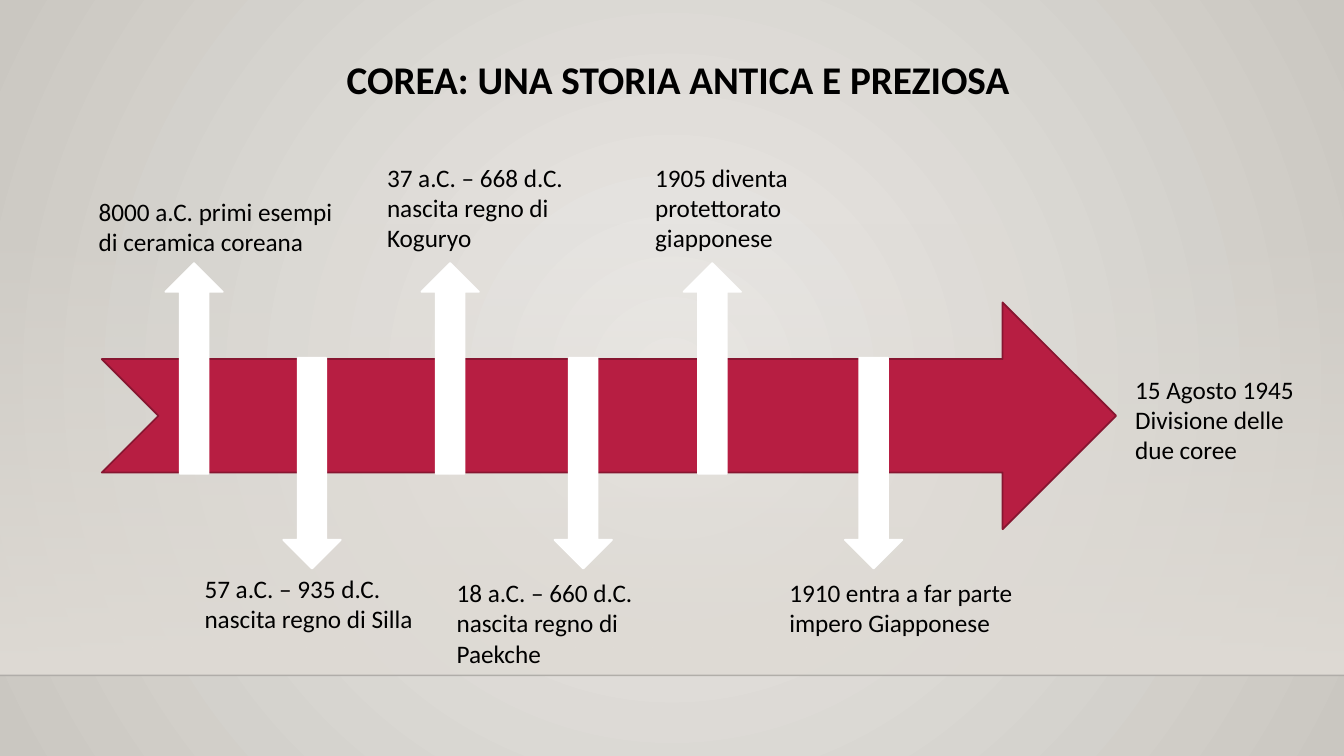
"""Build a timeline slide on the history of Korea."""
from dataclasses import dataclass

from lxml import etree
from pptx import Presentation
from pptx.dml.color import RGBColor
from pptx.dml.fill import FillFormat
from pptx.enum.shapes import MSO_CONNECTOR, MSO_SHAPE
from pptx.enum.text import MSO_AUTO_SIZE, PP_ALIGN
from pptx.oxml.ns import qn
from pptx.shapes.autoshape import Shape
from pptx.slide import Slide
from pptx.util import Pt

PX = 9144
WIDE, HIGH = 1333, 750
FLOOR = 670
FONT = "Calibri"
RECT, BAND = MSO_SHAPE.RECTANGLE, MSO_SHAPE.NOTCHED_RIGHT_ARROW
UP, DOWN = MSO_SHAPE.UP_ARROW, MSO_SHAPE.DOWN_ARROW
LINE = MSO_CONNECTOR.STRAIGHT
LEFT, MID = PP_ALIGN.LEFT, PP_ALIGN.CENTER
FIT = MSO_AUTO_SIZE.SHAPE_TO_FIT_TEXT
COLORS = {
    "glow": "ECEAE7", "edge": "CAC7C1", "wall": "DFDBD5", "rule": "000001",
    "band": "B71E42", "rim": "871631", "mark": "FFFFFF", "text": "000000",
}


@dataclass(frozen=True)
class Box:
    x: int
    y: int
    w: int
    h: int


@dataclass(frozen=True)
class Label:
    box: Box
    lines: tuple[str, ...]
    size: int = 18
    bold: bool = False
    align: PP_ALIGN = LEFT


@dataclass(frozen=True)
class Event:
    x: int
    up: bool
    label: Label


TITLE = Label(Box(126, 50, 1093, 57), ("COREA: UNA STORIA ANTICA E PREZIOSA",),
              28, True, MID)
END = Label(Box(1116, 366, 207, 101),
            ("15 Agosto 1945", "Divisione delle due coree"))
EVENTS = [
    Event(164, True, Label(Box(88, 190, 269, 71),
                           ("8000 a.C. primi esempi di ceramica coreana",))),
    Event(281, False, Label(Box(193, 564, 268, 71),
                            ("57 a.C. – 935 d.C. nascita regno di Silla",))),
    Event(418, True, Label(Box(374, 156, 201, 101),
                           ("37 a.C. – 668 d.C. nascita regno di Koguryo",))),
    Event(550, False, Label(Box(443, 568, 269, 71),
                            ("18 a.C. – 660 d.C. nascita regno di Paekche",))),
    Event(678, True, Label(Box(640, 156, 214, 101),
                           ("1905 diventa protettorato giapponese",))),
    Event(838, False, Label(Box(773, 568, 309, 71),
                            ("1910 entra a far parte impero Giapponese",))),
]


def tint(name: str) -> RGBColor:
    return RGBColor.from_string(COLORS[name])


def place(box: Box) -> tuple[int, ...]:
    return tuple(n * PX for n in (box.x, box.y, box.w, box.h))


def fade(node: etree._Element, share: int) -> None:
    color = next(node.iter(qn("a:srgbClr")))
    etree.SubElement(color, qn("a:alpha"), val=str(share * 1000))


def blend(fill: FillFormat, first: str, last: str) -> None:
    fill.gradient()
    for stop, name, spot in zip(fill.gradient_stops, (first, last), (0, 1)):
        stop.color.rgb = tint(name)
        stop.position = spot


def add_form(slide: Slide, kind: MSO_SHAPE, box: Box) -> Shape:
    form = slide.shapes.add_shape(kind, *place(box))
    form.shadow.inherit = False
    return form


def add_arrow(slide: Slide, kind: MSO_SHAPE, box: Box, fill: str,
              rim: str) -> None:
    arrow = add_form(slide, kind, box)
    arrow.fill.solid()
    arrow.fill.fore_color.rgb = tint(fill)
    arrow.line.color.rgb = tint(rim)
    arrow.line.width = Pt(1.25)


def add_label(slide: Slide, label: Label) -> None:
    frame = slide.shapes.add_textbox(*place(label.box)).text_frame
    frame.word_wrap = True
    frame.auto_size = FIT
    frame.text = "\n".join(label.lines)
    for para in frame.paragraphs:
        para.alignment = label.align
        para.font.name = FONT
        para.font.size = Pt(label.size)
        para.font.bold = label.bold
        para.font.color.rgb = tint("text")


def add_scene(slide: Slide) -> None:
    blend(slide.background.fill, "glow", "edge")
    grad = next(slide.element.iter(qn("a:gradFill")))
    grad.remove(grad.find(qn("a:lin")))
    ring = etree.SubElement(grad, qn("a:path"), {"path": "circle"})
    sides = dict.fromkeys("ltrb", "50000")
    etree.SubElement(ring, qn("a:fillToRect"), sides)

    wall = add_form(slide, RECT, Box(0, 221, WIDE, FLOOR - 221))
    wall.line.fill.background()
    blend(wall.fill, "wall", "wall")
    wall.fill.gradient_angle = 270
    fade(wall.element.spPr, 0)

    rule = slide.shapes.add_connector(LINE, 0, FLOOR * PX, WIDE * PX, FLOOR * PX)
    rule.line.color.rgb = tint("rule")
    rule.line.width = Pt(1)
    props = rule.element.spPr
    fade(props, 20)
    etree.SubElement(props, qn("a:effectLst"))


def main() -> None:
    deck = Presentation()
    deck.slide_width, deck.slide_height = WIDE * PX, HIGH * PX
    slide = deck.slides.add_slide(deck.slide_layouts[6])
    add_scene(slide)
    add_arrow(slide, BAND, Box(101, 300, 1006, 225), "band", "rim")
    add_label(slide, TITLE)
    for event in EVENTS:
        kind, top = (UP, 261) if event.up else (DOWN, 355)
        add_arrow(slide, kind, Box(event.x, top, 57, 209), "mark", "mark")
        add_label(slide, event.label)
    add_label(slide, END)
    deck.save("out.pptx")


if __name__ == "__main__":
    main()
